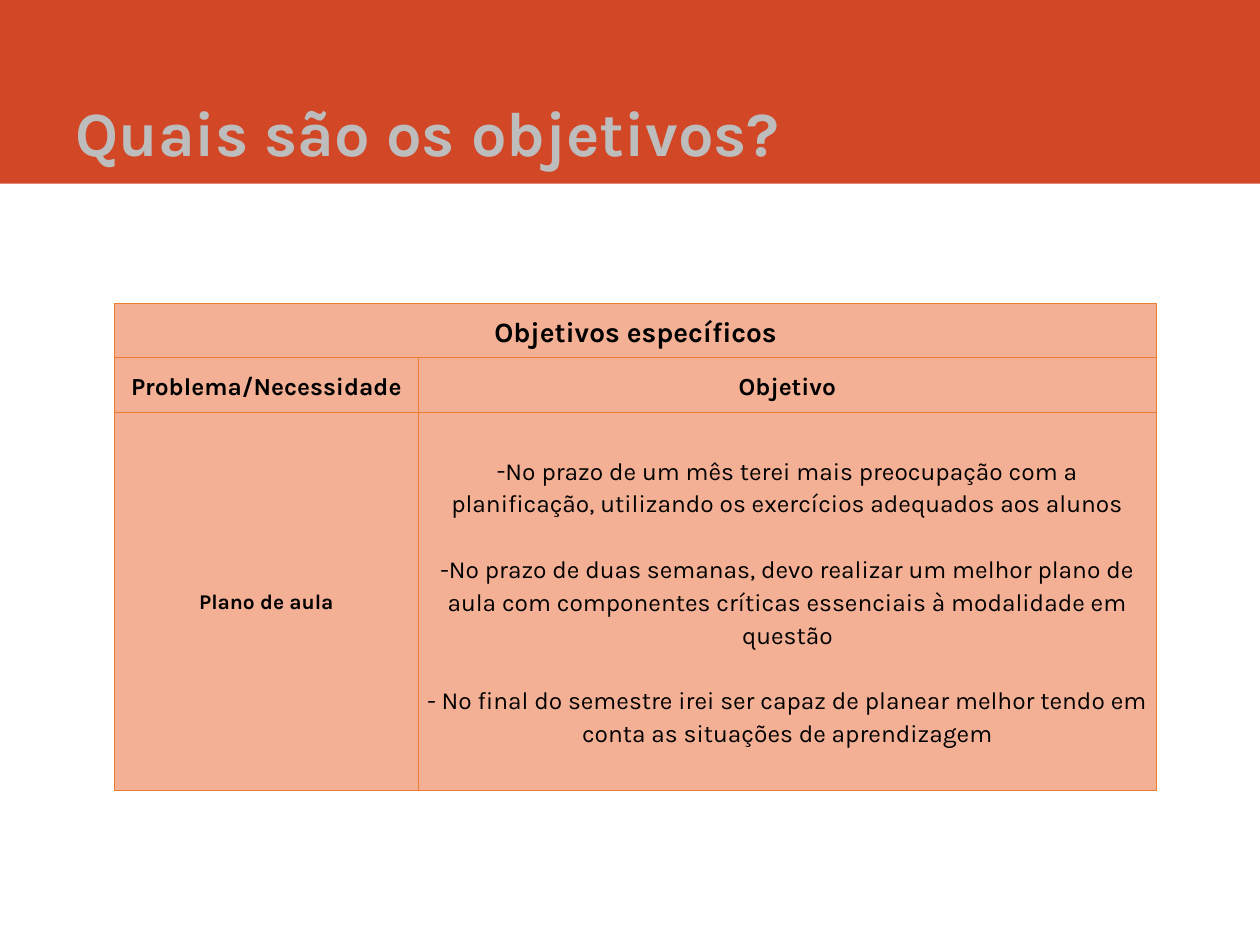
from lxml import etree
from pptx import Presentation
from pptx import util as u
from pptx.dml.color import RGBColor
from pptx.enum import shapes, text
from pptx.oxml.ns import qn

FONT = "Karla"
ORANGE, SALMON, BORDER = "D24726", "F4B095", "ED7D31"
BLACK, GREY = "000000", "BDBDBD"
OBJECTIVES = [
    ("No prazo de um mês terei mais preocupação com a planificação, "
     "utilizando os exercícios adequados aos alunos", True),
    ("No prazo de duas semanas, devo realizar um melhor plano de aula com "
     "componentes críticas essenciais à modalidade em questão", True),
    ("- No final do semestre irei ser capaz de planear melhor tendo em conta "
     "as situações de aprendizagem", False),
]


def color(value):
    return RGBColor.from_string(value)


def apply_format(target, values):
    for name, value in values.items():
        setattr(target, name, value)


def write(paragraph, content, size, bold=True, ink=BLACK):
    run = paragraph.add_run()
    run.text = content
    apply_format(run.font, {"name": FONT, "size": u.Pt(size), "bold": bold})
    run.font.color.rgb = color(ink)


def add_band(slide, width, height):
    band = slide.shapes.add_shape(
        shapes.MSO_SHAPE.RECTANGLE, 0, 0, width, height)
    band.shadow.inherit = False
    band.fill.solid()
    band.fill.fore_color.rgb = color(ORANGE)
    band.line.fill.background()


def add_title(slide, content):
    box = slide.shapes.add_textbox(u.Pt(36), 0, u.Pt(634), u.Pt(96.5))
    apply_format(box.text_frame, {
        "word_wrap": True,
        "vertical_anchor": text.MSO_ANCHOR.BOTTOM,
        "margin_bottom": 0,
    })
    write(box.text_frame.paragraphs[0], content, 36, ink=GREY)


def add_borders(cell):
    properties = cell._tc.get_or_add_tcPr()
    for position, side in enumerate(("lnL", "lnR", "lnT", "lnB")):
        line = etree.Element(qn(f"a:{side}"), w=str(u.Pt(0.5)))
        fill = etree.SubElement(line, qn("a:solidFill"))
        etree.SubElement(fill, qn("a:srgbClr"), val=BORDER)
        properties.insert(position, line)


def add_dash(paragraph):
    properties = paragraph._p.get_or_add_pPr()
    properties.set("marL", "0")
    properties.set("indent", "0")
    etree.SubElement(properties, qn("a:buFont"), typeface=FONT)
    etree.SubElement(properties, qn("a:buChar"), char="-")


def format_cell(cell):
    apply_format(cell, {
        "vertical_anchor": text.MSO_ANCHOR.MIDDLE,
        "margin_left": u.Pt(5), "margin_right": u.Pt(5),
        "margin_top": 0, "margin_bottom": 0,
    })
    cell.fill.solid()
    cell.fill.fore_color.rgb = color(SALMON)
    add_borders(cell)


def center(paragraph, space_before=0):
    apply_format(paragraph, {
        "alignment": text.PP_ALIGN.CENTER,
        "line_spacing": 1.15,
        "space_before": u.Pt(space_before),
    })


def fill_objectives(cell):
    for index, (content, dashed) in enumerate(OBJECTIVES):
        frame = cell.text_frame
        paragraph = frame.add_paragraph() if index else frame.paragraphs[0]
        center(paragraph, 18.75 if index else 0)
        if dashed:
            add_dash(paragraph)
        write(paragraph, content, 14, bold=False)


def add_objectives_table(slide):
    widths, heights = (173.5, 422), (31, 31, 216)
    table = slide.shapes.add_table(
        len(heights), len(widths), u.Pt(65.5), u.Pt(173.5),
        u.Pt(sum(widths)), u.Pt(sum(heights))).table
    for column, width in zip(table.columns, widths):
        column.width = u.Pt(width)
    for row, height in zip(table.rows, heights):
        row.height = u.Pt(height)
    for cell in table.iter_cells():
        format_cell(cell)
    table.cell(0, 0).merge(table.cell(0, 1))
    labels = {
        (0, 0): ("Objetivos específicos", 16),
        (1, 0): ("Problema/Necessidade", 14),
        (1, 1): ("Objetivo", 14),
        (2, 0): ("Plano de aula", 12),
    }
    for position, (content, size) in labels.items():
        paragraph = table.cell(*position).text_frame.paragraphs[0]
        center(paragraph)
        write(paragraph, content, size)
    fill_objectives(table.cell(2, 1))


def main():
    presentation = Presentation()
    apply_format(presentation, {
        "slide_width": u.Pt(720), "slide_height": u.Pt(540)})
    slide = presentation.slides.add_slide(presentation.slide_layouts[6])
    add_band(slide, presentation.slide_width, u.Pt(105))
    add_title(slide, "Quais são os objetivos?")
    add_objectives_table(slide)
    presentation.save("out.pptx")


if __name__ == "__main__":
    main()
